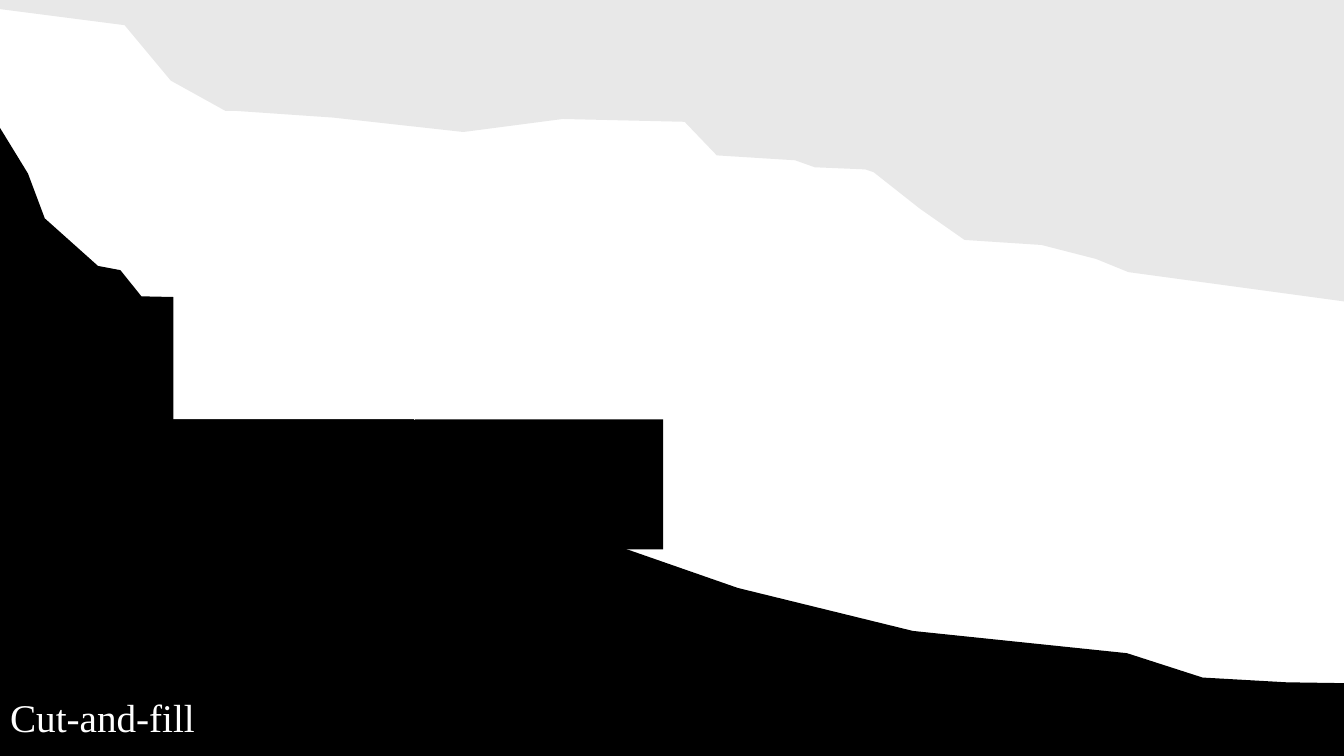
from itertools import chain

from pptx import Presentation
from pptx.dml.color import RGBColor
from pptx.enum.shapes import MSO_SHAPE as Preset
from pptx.enum.text import MSO_ANCHOR as Anchor, MSO_AUTO_SIZE as AutoSize, PP_ALIGN as Align
from pptx.util import Pt

TITLE_ONLY = 5
SLIDE_WIDTH, SLIDE_HEIGHT = 960, 540
BLACK, WHITE, GREY = "000000", "FFFFFF", "E8E8E8"

# Each surface runs from left to right, as (x, y) bends in points
GROUND_LINE = {
    "steep top": [(0, 91.4), (20, 124), (32, 156), (70, 190), (86, 193), (101, 211.7)],
    "slope behind the blocks": [(210, 214), (280, 250), (295, 299), (354, 350), (438, 389)],
    "gentle foot": [(527, 420), (652, 450.7), (805, 466.6), (859, 484), (919, 487.4),
                    (SLIDE_WIDTH, 488)],
}
SKY_LINE = {
    "near crest": [(0, 6.5), (89, 18), (122, 57.6), (161, 79.2)],
    "long ridge": [(168, 79.2), (238, 84), (331, 94.3), (402, 85), (489, 87)],
    "middle step": [(512, 111), (568, 114.5), (582, 119.5), (618, 121), (624, 123)],
    "far descent": [(657, 149), (689, 171.4), (744, 175), (783, 185), (806, 194.4),
                    (SLIDE_WIDTH, 215.3)],
}

# Cut and fill are equal blocks: the fill starts at the level where the cut ends
BLOCK_WIDTH, BLOCK_HEIGHT, OVERLAP = 177.1, 92.9, 4.3
CUT_LEFT, CUT_TOP = 123.8, 206.6
FILL_LEFT = CUT_LEFT + BLOCK_WIDTH - OVERLAP
FILL_TOP = CUT_TOP + BLOCK_HEIGHT


def color(value):
    return RGBColor.from_string(value)


def paint(shape, value):
    shape.shadow.inherit = False
    shape.fill.solid()
    shape.fill.fore_color.rgb = color(value)
    shape.line.fill.background()


presentation = Presentation()
presentation.slide_width, presentation.slide_height = Pt(SLIDE_WIDTH), Pt(SLIDE_HEIGHT)
slide = presentation.slides.add_slide(presentation.slide_layouts[TITLE_ONLY])
slide.background.fill.solid()
slide.background.fill.fore_color.rgb = color(WHITE)

# Ground and sky: close each surface along the slide edge that it fills towards
for surface, edge, fill in [(GROUND_LINE, SLIDE_HEIGHT, BLACK), (SKY_LINE, 0, GREY)]:
    outline = [*chain.from_iterable(surface.values()), (SLIDE_WIDTH, edge), (0, edge)]
    start, *corners = [(Pt(x), Pt(y)) for x, y in outline]
    builder = slide.shapes.build_freeform(*start)
    builder.add_line_segments(corners, close=True)
    paint(builder.convert_to_shape(), fill)

# Cut taken out of the slope, then the fill placed below it
for left, top, fill in [(CUT_LEFT, CUT_TOP, WHITE), (FILL_LEFT, FILL_TOP, BLACK)]:
    block = slide.shapes.add_shape(
        Preset.RECTANGLE, Pt(left), Pt(top), Pt(BLOCK_WIDTH), Pt(BLOCK_HEIGHT))
    paint(block, fill)

# Title, brought in front of the ground
title = slide.shapes.title
title.element.getparent().append(title.element)
title.text = "Cut-and-fill"
frame = title.text_frame
paragraph = frame.paragraphs[0]
font = paragraph.runs[0].font
formats = [
    (title, {"left": Pt(0), "top": Pt(495.4), "width": Pt(720), "height": Pt(56.9)}),
    (frame, {"word_wrap": True, "auto_size": AutoSize.NONE, "vertical_anchor": Anchor.TOP}),
    (paragraph, {"alignment": Align.LEFT, "line_spacing": 0.9, "space_before": Pt(10)}),
    (font, {"name": "Times New Roman", "size": Pt(28)}),
    (font.color, {"rgb": color(WHITE)}),
]
for target, values in formats:
    for name, value in values.items():
        setattr(target, name, value)

presentation.save("out.pptx")
